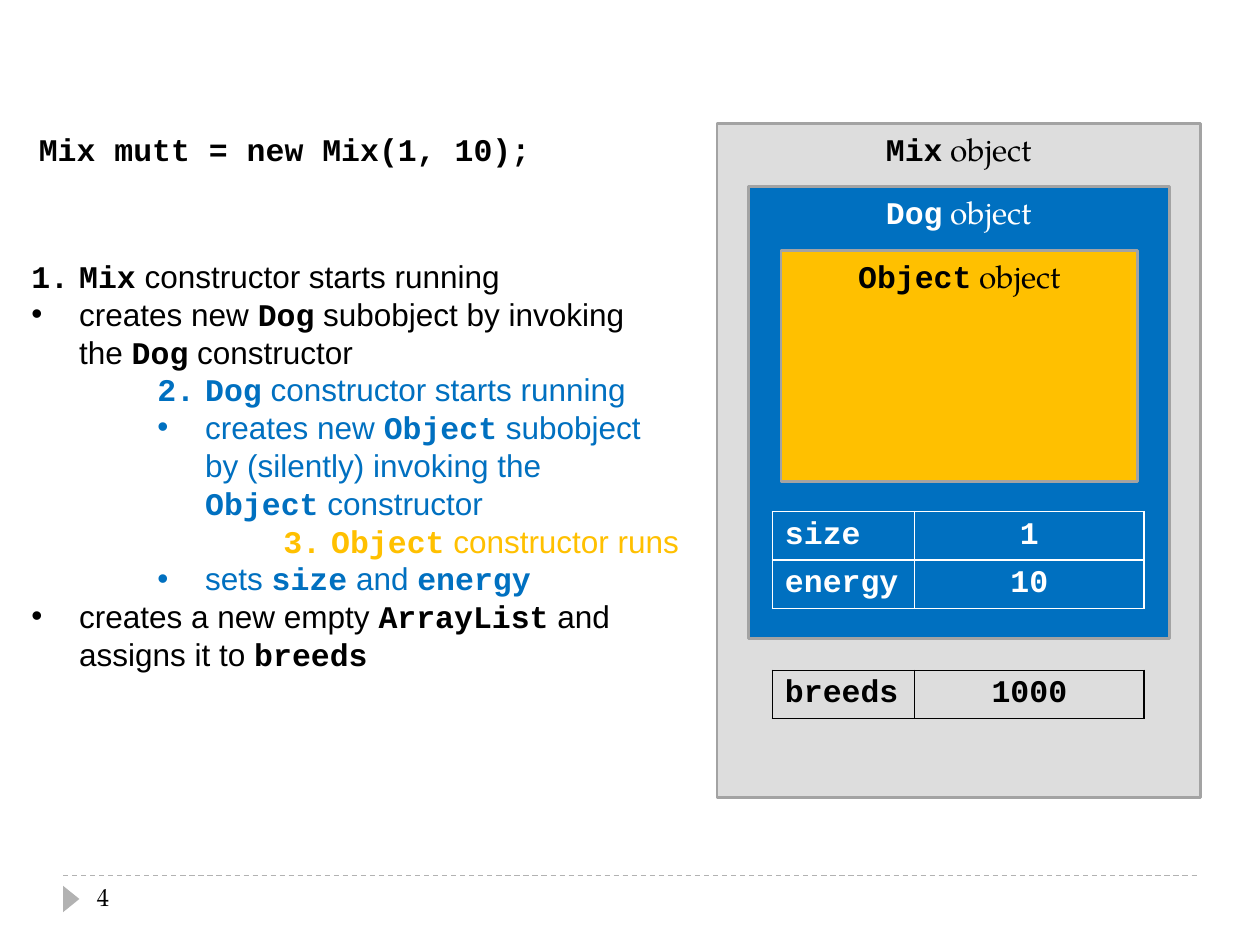
from pptx import Presentation
from pptx.dml.color import RGBColor
from pptx.enum.dml import MSO_LINE_DASH_STYLE as DASH
from pptx.enum.shapes import MSO_CONNECTOR as CONNECTOR, MSO_SHAPE as SHAPE
from pptx.enum.text import MSO_ANCHOR as ANCHOR, MSO_AUTO_SIZE as AUTO_SIZE, PP_ALIGN as ALIGN
from pptx.oxml.ns import qn
from pptx.util import Inches, Pt
from lxml.etree import SubElement

CODE_FONT, LIST_FONT, LABEL_FONT = "Courier New", "Arial", "TeX Gyre Pagella"
BLACK, WHITE, BLUE, GOLD = "000000", "FFFFFF", "0070C0", "FFC000"
LIGHT_GRAY, EDGE_GRAY, RULE_GRAY = "DDDDDD", "A3A3A3", "B2B2B2"

OBJECTS = [
    ("`Mix` object", (5.69, 0.98, 3.84, 5.35), LIGHT_GRAY, BLACK),
    ("`Dog` object", (5.94, 1.48, 3.34, 3.59), BLUE, WHITE),
    ("`Object` object", (6.2, 1.99, 2.83, 1.83), GOLD, BLACK),
]
FIELD_TABLES = [
    (4.06, [("size", "1"), ("energy", "10")], WHITE),
    (5.32, [("breeds", "1000")], BLACK),
]
STEPS = [
    (0, 1, "`Mix` constructor starts running"),
    (0, None, "creates new `Dog` subobject by invoking\nthe `Dog` constructor"),
    (1, 2, "`Dog` constructor starts running"),
    (1, None, "creates new `Object` subobject\nby (silently) invoking the\n`Object` constructor"),
    (2, 3, "`Object` constructor runs"),
    (1, None, "sets `size` and `energy`"),
    (0, None, "creates a new empty `ArrayList` and\nassigns it to `breeds`"),
]
STEP_COLORS = [BLACK, BLUE, GOLD]
STEP_LEVELS = [0, 1, 3]


def rgb(color):
    return RGBColor.from_string(color)


def box(left, top, width, height):
    return [Inches(value) for value in (left, top, width, height)]


def write(paragraph, text, font=LIST_FONT, size=18, color=BLACK, align=ALIGN.LEFT):
    paragraph.alignment = align
    for index, part in enumerate(text.split("`")):
        is_code = index % 2 == 1
        for line_index, line in enumerate(part.split("\n")):
            if line_index:
                paragraph.add_line_break()
            if line:
                run = paragraph.add_run()
                run.text = line
                run.font.name = CODE_FONT if is_code else font
                run.font.bold = is_code
                run.font.size = Pt(size)
                run.font.color.rgb = rgb(color)


def add_text_box(slide, place, wrap=False):
    frame = slide.shapes.add_textbox(*box(*place)).text_frame
    frame.word_wrap = wrap
    frame.auto_size = AUTO_SIZE.NONE if wrap else AUTO_SIZE.SHAPE_TO_FIT_TEXT
    return frame


def add_filled_shape(slide, kind, place, fill, edge=None):
    shape = slide.shapes.add_shape(kind, *box(*place))
    shape.shadow.inherit = False
    shape.fill.solid()
    shape.fill.fore_color.rgb = rgb(fill)
    if edge:
        shape.line.color.rgb = rgb(edge)
        shape.line.width = Pt(1.5)
    else:
        shape.line.fill.background()
    return shape


def add_object(slide, label, place, fill, color):
    frame = add_filled_shape(slide, SHAPE.RECTANGLE, place, fill, EDGE_GRAY).text_frame
    frame.vertical_anchor = ANCHOR.TOP
    frame.word_wrap = True
    write(frame.paragraphs[0], label, font=LABEL_FONT, color=color, align=ALIGN.CENTER)


def set_borders(cell, color):
    properties = cell._tc.get_or_add_tcPr()
    for side in ("a:lnL", "a:lnR", "a:lnT", "a:lnB"):
        line = SubElement(properties, qn(side), w=str(Pt(1)))
        SubElement(SubElement(line, qn("a:solidFill")), qn("a:srgbClr"), val=color)


def add_fields(slide, top, fields, color):
    place = box(6.13, top, 2.95, 0.38 * len(fields))
    table = slide.shapes.add_table(len(fields), 2, *place).table
    table.first_row = table.horz_banding = False
    for column, width in zip(table.columns, (1.13, 1.82)):
        column.width = Inches(width)
    for row, field in enumerate(fields):
        for column, (text, align) in enumerate(zip(field, (ALIGN.LEFT, ALIGN.CENTER))):
            cell = table.cell(row, column)
            set_borders(cell, color)
            cell.fill.background()
            write(cell.text_frame.paragraphs[0], f"`{text}`", color=color, align=align)


def set_bullet(paragraph, depth, number):
    properties = paragraph._p.get_or_add_pPr()
    properties.set("marL", str(Inches(0.38 + depth)))
    properties.set("indent", str(Inches(-0.38)))
    if number:
        SubElement(properties, qn("a:buAutoNum"), type="arabicPeriod", startAt=str(number))
    else:
        SubElement(properties, qn("a:buFont"), typeface=LIST_FONT)
        SubElement(properties, qn("a:buChar"), char="•")


def add_steps(slide):
    frame = add_text_box(slide, (0.15, 1.99, 5.58, 3.43))
    for index, (depth, number, text) in enumerate(STEPS):
        paragraph = frame.add_paragraph() if index else frame.paragraphs[0]
        paragraph.level = STEP_LEVELS[depth]
        set_bullet(paragraph, depth, number)
        write(paragraph, text, color=STEP_COLORS[depth])


def add_footer(slide):
    ends = box(0.5, 6.95, 9.5, 6.95)
    rule = slide.shapes.add_connector(CONNECTOR.STRAIGHT, *ends)
    rule.line.color.rgb = rgb(RULE_GRAY)
    rule.line.width = Pt(0.75)
    rule.line.dash_style = DASH.DASH
    SubElement(rule._element.spPr, qn("a:effectLst"))
    marker = add_filled_shape(slide, SHAPE.ISOSCELES_TRIANGLE, (0.46, 7.07, 0.21, 0.13), RULE_GRAY)
    marker.rotation = 90
    frame = add_text_box(slide, (0.67, 6.95, 2.17, 0.4), wrap=True)
    write(frame.paragraphs[0], "4", font=LABEL_FONT, size=14)


def main():
    presentation = Presentation()
    presentation.slide_width, presentation.slide_height = Inches(10), Inches(7.5)
    slide = presentation.slides.add_slide(presentation.slide_layouts[6])
    add_footer(slide)
    for item in OBJECTS:
        add_object(slide, *item)
    for item in FIELD_TABLES:
        add_fields(slide, *item)
    statement = add_text_box(slide, (0.21, 0.98, 4.12, 0.4))
    write(statement.paragraphs[0], "`Mix mutt = new Mix(1, 10);`")
    add_steps(slide)
    presentation.save("out.pptx")


if __name__ == "__main__":
    main()
